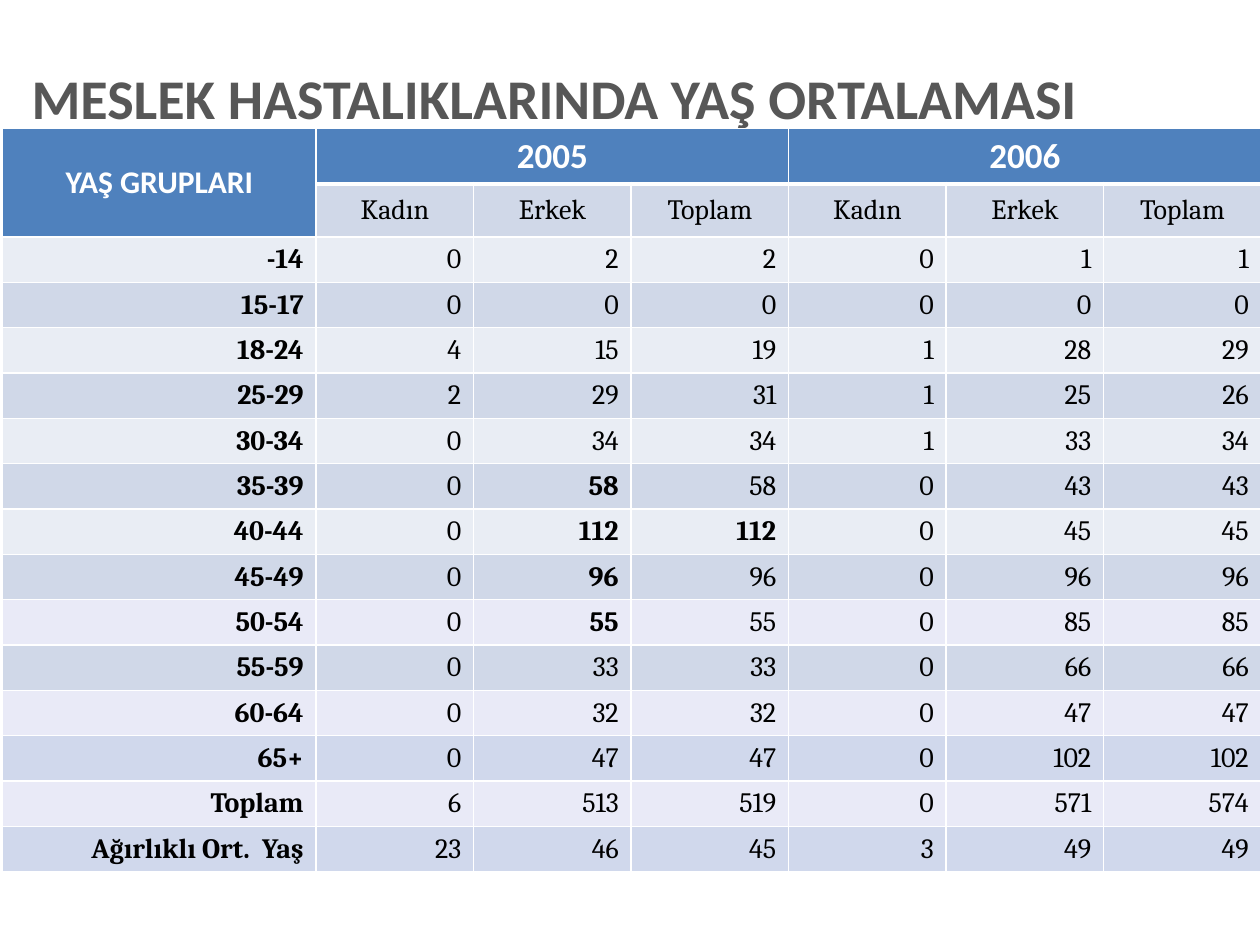
"""Build the slide on the average age in occupational diseases."""

from lxml import etree
from pptx import Presentation
from pptx import util as u
from pptx.dml.color import RGBColor
from pptx.enum import text
from pptx.oxml import ns

TITLE = "MESLEK HASTALIKLARINDA YAŞ ORTALAMASI"
CORNER = "YAŞ GRUPLARI"
YEARS = ["2005", "2006"]
SEXES = ["Kadın", "Erkek", "Toplam"]
ROWS = [
    ("-14", 0, 2, 2, 0, 1, 1),
    ("15-17", 0, 0, 0, 0, 0, 0),
    ("18-24", 4, 15, 19, 1, 28, 29),
    ("25-29", 2, 29, 31, 1, 25, 26),
    ("30-34", 0, 34, 34, 1, 33, 34),
    ("35-39", 0, 58, 58, 0, 43, 43),
    ("40-44", 0, 112, 112, 0, 45, 45),
    ("45-49", 0, 96, 96, 0, 96, 96),
    ("50-54", 0, 55, 55, 0, 85, 85),
    ("55-59", 0, 33, 33, 0, 66, 66),
    ("60-64", 0, 32, 32, 0, 47, 47),
    ("65+", 0, 47, 47, 0, 102, 102),
    ("Toplam", 6, 513, 519, 0, 571, 574),
    ("Ağırlıklı Ort.  Yaş", 23, 46, 45, 3, 49, 49),
]
STRONG = {("35-39", 2), ("40-44", 2), ("40-44", 3), ("45-49", 2), ("50-54", 2)}
COLORS = {
    "gray": "575757", "white": "FFFFFF", "black": "000000",
    "head": "4F81BD", "dark": "D0D8E8", "light": "E9EDF4",
    "lilac": "E9EAF7", "blue": "D0D8EC",
}
BANDS = ["light", "dark"] * 4 + ["lilac", "dark"] + ["lilac", "blue"] * 2
WIDTHS = [2.49] + [1.25] * 6
HEIGHTS = [0.42] * 2 + [0.36] * len(ROWS)
ALIGN = {"l": text.PP_ALIGN.LEFT, "c": text.PP_ALIGN.CENTER, "r": text.PP_ALIGN.RIGHT}


def write(frame, words, size=16, font="Cambria", color="black", bold=False,
          align="r", line=None):
    """Write formatted text in the first paragraph of a frame."""
    par = frame.paragraphs[0]
    par.alignment = ALIGN[align]
    if line:
        par.line_spacing = line
    run = par.add_run()
    run.text = words
    run.font.size = u.Pt(size)
    run.font.name = font
    run.font.bold = bold
    run.font.color.rgb = RGBColor.from_string(COLORS[color])


def border(cell, **thick):
    """Draw the four white edges of a cell."""
    props = cell._tc.get_or_add_tcPr()
    for side in "LRTB":
        width = u.Pt(thick.get(side, 1))
        edge = etree.SubElement(props, ns.qn(f"a:ln{side}"), w=str(width))
        fill = etree.SubElement(edge, ns.qn("a:solidFill"))
        etree.SubElement(fill, ns.qn("a:srgbClr"), val=COLORS["white"])


def paint(cell, words, fill, thick=None, **form):
    """Fill a table cell and write its text."""
    border(cell, **(thick or {}))
    cell.fill.solid()
    cell.fill.fore_color.rgb = RGBColor.from_string(COLORS[fill])
    cell.vertical_anchor = text.MSO_ANCHOR.MIDDLE
    write(cell.text_frame, str(words), **form)


def fill_grid(grid):
    """Lay out the header rows and the data rows."""
    for col, width in zip(grid.columns, WIDTHS):
        col.width = u.Inches(width)
    for row, height in zip(grid.rows, HEIGHTS):
        row.height = u.Inches(height)
    head = dict(fill="head", color="white", font="Calibri", bold=True, align="c")
    grid.cell(0, 0).merge(grid.cell(1, 0))
    paint(grid.cell(0, 0), CORNER, size=18, **head)
    span = len(SEXES)
    for i, year in enumerate(YEARS):
        left = 1 + i * span
        grid.cell(0, left).merge(grid.cell(0, left + span - 1))
        paint(grid.cell(0, left), year, size=20, thick={"B": 3}, **head)
        for j, sex in enumerate(SEXES):
            paint(grid.cell(1, left + j), sex, "dark", thick={"T": 3}, align="c")
    for r, (row, band) in enumerate(zip(ROWS, BANDS), 2):
        for c, value in enumerate(row):
            bold = c == 0 or (row[0], c) in STRONG
            paint(grid.cell(r, c), value, band, bold=bold)


def set_title(title):
    """Place and format the title."""
    title.left, title.top = u.Inches(0.25), u.Inches(0.45)
    title.width, title.height = u.Inches(9.64), u.Inches(0.71)
    frame = title.text_frame
    frame.word_wrap = True
    frame.auto_size = text.MSO_AUTO_SIZE.NONE
    frame.margin_left = frame.margin_right = 0
    frame.margin_top = frame.margin_bottom = u.Inches(0.05)
    frame.vertical_anchor = text.MSO_ANCHOR.MIDDLE
    write(frame, TITLE, size=32, font="Calibri", color="gray", bold=True,
          align="l", line=0.9)


def main():
    """Build and save the slide."""
    deck = Presentation()
    deck.slide_width, deck.slide_height = u.Inches(10), u.Inches(7.5)
    slide = deck.slides.add_slide(deck.slide_layouts[5])
    set_title(slide.shapes.title)
    box = map(u.Inches, (0.02, 1.02, sum(WIDTHS), sum(HEIGHTS)))
    fill_grid(slide.shapes.add_table(len(HEIGHTS), len(WIDTHS), *box).table)
    deck.save("out.pptx")


if __name__ == "__main__":
    main()
